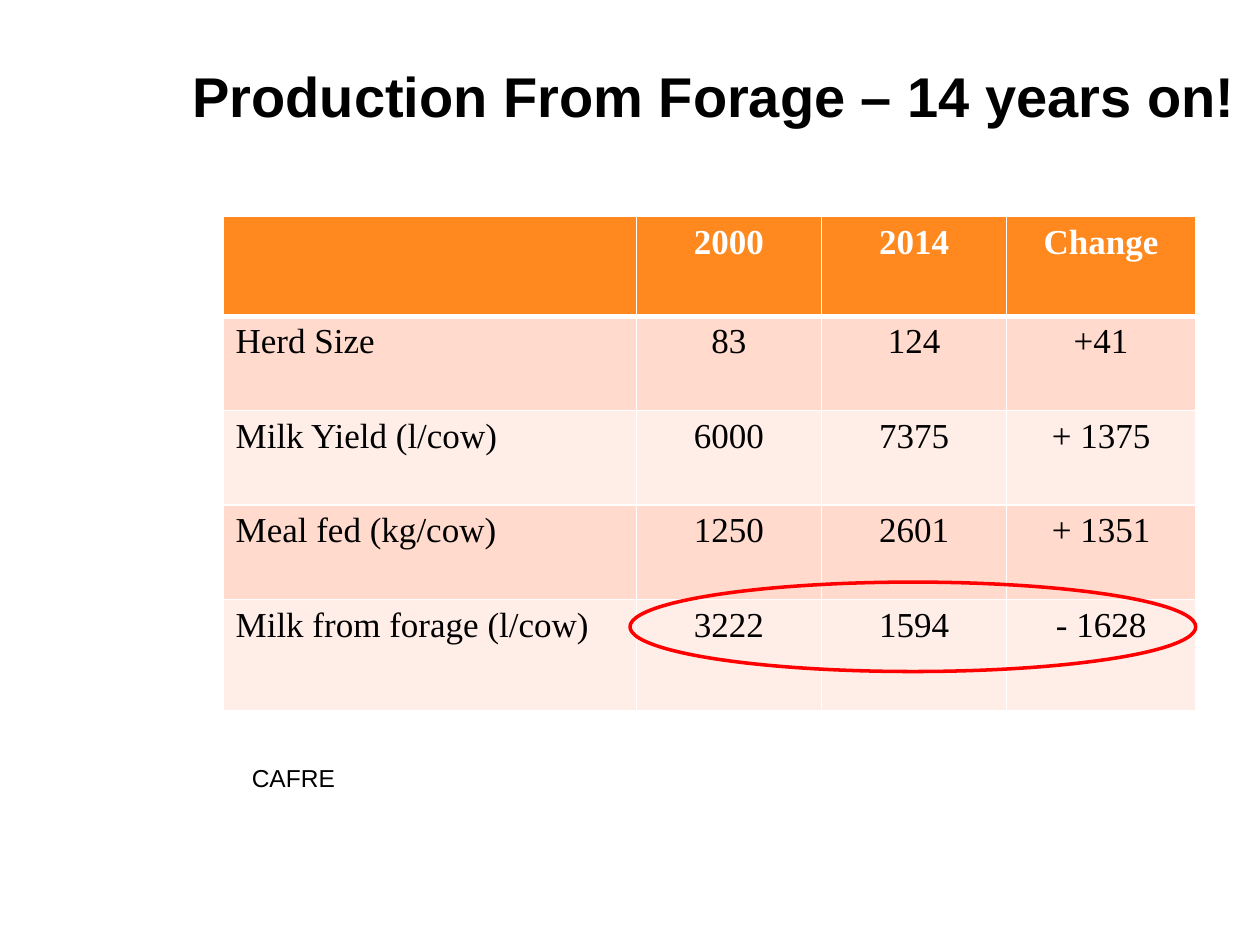
from lxml.etree import SubElement
from pptx import Presentation
from pptx.dml.color import RGBColor
from pptx.enum.shapes import MSO_SHAPE as Shape
from pptx.enum.text import MSO_ANCHOR as Anchor, PP_ALIGN as Align
from pptx.oxml.ns import qn
from pptx.util import Inches, Pt

HEADER_FILL, BAND_FILLS = "FF881F", ("FFEDE8", "FFDACD")
COLUMN_WIDTHS = (3.28, 1.47, 1.47, 1.5)
ROW_HEIGHTS = (0.79, 0.75, 0.75, 0.75, 0.88)
FORAGE_ROWS = (
    ("", "2000", "2014", "Change"),
    ("Herd Size", "83", "124", "+41"),
    ("Milk Yield (l/cow)", "6000", "7375", "+ 1375"),
    ("Meal fed (kg/cow)", "1250", "2601", "+ 1351"),
    ("Milk from forage (l/cow)", "3222", "1594", "- 1628"),
)
TITLE = {"name": "Arial", "size": Pt(32), "bold": True}
SOURCE = {"name": "Arial", "size": Pt(14), "bold": False}
HEADER = {"name": "Times New Roman", "size": Pt(20), "bold": True}
BODY = {**HEADER, "bold": False}


def color(value):
    return RGBColor.from_string(value)


class SlideBuilder:
    """Draws styled elements on the current slide."""

    def __init__(self, page):
        self.page = page

    def fill_text(self, frame, text, style, ink="000000", align=Align.LEFT):
        para = frame.paragraphs[0]
        para.alignment = align
        span = para.add_run()
        span.text = text
        for key, value in style.items():
            setattr(span.font, key, value)
        span.font.color.rgb = color(ink)

    def text(self, area, text, style, align=Align.LEFT):
        box = self.page.shapes.add_textbox(*map(Inches, area))
        box.text_frame.word_wrap = True
        box.text_frame.vertical_anchor = Anchor.TOP
        self.fill_text(box.text_frame, text, style, align=align)

    def ellipse(self, area, line, width):
        ring = self.page.shapes.add_shape(Shape.OVAL, *map(Inches, area))
        ring.shadow.inherit = False
        ring.fill.background()
        ring.line.color.rgb = color(line)
        ring.line.width = Pt(width)

    def borders(self, cell, widths):
        properties = cell._tc.get_or_add_tcPr()
        for side, width in widths.items():
            edge = SubElement(properties, qn(f"a:ln{side}"), w=str(Pt(width)))
            fill = SubElement(edge, qn("a:solidFill"))
            SubElement(fill, qn("a:srgbClr"), val="FFFFFF")

    def table(self, left, top, rows, widths, heights):
        area = (left, top, sum(widths), sum(heights))
        table = self.page.shapes.add_table(
            len(rows), len(widths), *map(Inches, area)).table
        for column, width in zip(table.columns, widths):
            column.width = Inches(width)
        for row, height in zip(table.rows, heights):
            row.height = Inches(height)
        for i, values in enumerate(rows):
            for j, value in enumerate(values):
                cell = table.cell(i, j)
                self.borders(cell, {"L": 1, "R": 1, "T": 3 if i == 1 else 1,
                                    "B": 3 if i == 0 else 1})
                cell.fill.solid()
                cell.fill.fore_color.rgb = color(BAND_FILLS[i % 2] if i else HEADER_FILL)
                if value:
                    self.fill_text(cell.text_frame, value, BODY if i else HEADER,
                                   "000000" if i else "FFFFFF",
                                   Align.CENTER if j else Align.LEFT)


def main():
    deck = Presentation()
    deck.slide_width, deck.slide_height = Inches(10), Inches(7.5)
    builder = SlideBuilder(deck.slides.add_slide(deck.slide_layouts[6]))
    builder.table(1.77, 1.72, FORAGE_ROWS, COLUMN_WIDTHS, ROW_HEIGHTS)
    builder.text((1.9, 6.01, 1.05, 0.34), "CAFRE", SOURCE)
    builder.text((1.22, 0.44, 8.9, 1.25), "Production From Forage – 14 years on!",
                 TITLE, Align.CENTER)
    builder.ellipse((5, 4.62, 4.49, 0.71), "FF0000", 2)
    deck.save("out.pptx")


if __name__ == "__main__":
    main()
